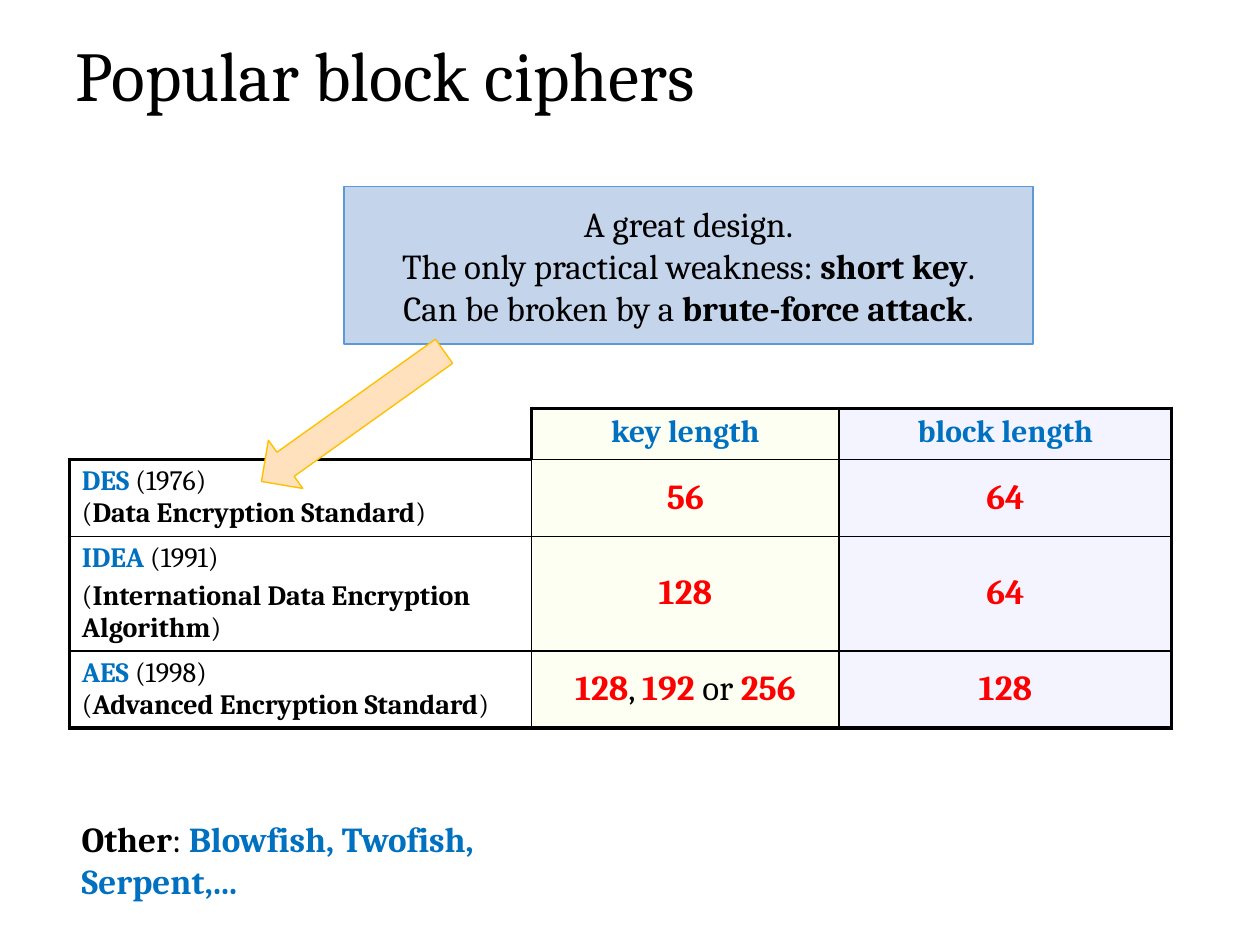
"""Build a slide comparing popular block ciphers."""
from lxml import etree
from pptx import Presentation
from pptx import util as u
from pptx.dml.color import RGBColor
from pptx.enum import shapes, text
from pptx.oxml.ns import qn

THEME = {
    "font": "Cambria",
    "size": {"title": 40, "body": 20, "header": 18, "cipher": 16},
    "color": {"ink": "000000", "blue": "0070C0", "red": "FF0000",
              "key": "FDFFF3", "block": "F3F4FF", "callout": "C4D5EB",
              "callout_line": "5B9BD5", "arrow": "FFE2BD", "arrow_line": "FFC000"},
    "line": {"shape": 0.79, "inner": 1, "outer": 2.25},
}
STYLES = {"plain": ("ink", False), "strong": ("ink", True),
          "name": ("blue", True), "value": ("red", True)}

TITLE = "Popular block ciphers"
CALLOUT = [
    [("A great design.", "plain")],
    [("The only practical weakness: ", "plain"), ("short key", "strong"), (".", "plain")],
    [("Can be broken by a ", "plain"), ("brute-force attack", "strong"), (".", "plain")],
]
OTHER = [[("Other", "strong"), (": ", "plain"), ("Blowfish, Twofish, Serpent,...", "name")]]
HEADERS = ["key length", "block length"]
CIPHERS = [
    ([[("DES ", "name"), ("(1976)\n(", "plain"),
       ("Data Encryption Standard", "strong"), (")", "plain")]],
     [("56", "value")], "64"),
    ([[("IDEA", "name"), (" (1991)", "plain")],
      [("(", "plain"), ("International Data Encryption Algorithm", "strong"), (")", "plain")]],
     [("128", "value")], "64"),
    ([[("AES", "name"), (" (1998)\n(", "plain"),
       ("Advanced Encryption Standard", "strong"), (")", "plain")]],
     [("128", "value"), (", ", "plain"), ("192 ", "value"), ("or ", "plain"), ("256", "value")],
     "128"),
]
COLUMN_WIDTHS = [3.67, 2.44, 2.64]
ROW_HEIGHTS = [0.31, 0.52, 0.62, 0.52]


def color(name):
    return RGBColor.from_string(THEME["color"][name])


def inches(*lengths):
    return [u.Inches(length) for length in lengths]


def write(frame, paragraphs, size, align=text.PP_ALIGN.LEFT, gap=0):
    points = THEME["size"][size]
    for index, spans in enumerate(paragraphs):
        para = frame.add_paragraph() if index else frame.paragraphs[0]
        para.alignment = align
        para.font.name, para.font.size = THEME["font"], u.Pt(points)
        if index and gap:
            para.space_before = u.Pt(gap * points)
        for words, style in spans:
            for number, line in enumerate(words.split("\n")):
                if number:
                    para.add_line_break()
                span = para.add_run()
                span.text = line
                tone, span.font.bold = STYLES[style]
                span.font.color.rgb = color(tone)


def add_box(page, kind, place, fill, line):
    box = page.shapes.add_shape(kind, *inches(*place))
    box.shadow.inherit = False
    box.fill.solid()
    box.fill.fore_color.rgb = color(fill)
    box.line.color.rgb = color(line)
    box.line.width = u.Pt(THEME["line"]["shape"])
    return box


def set_borders(cell, widths):
    properties = cell._tc.get_or_add_tcPr()
    for index, (side, width) in enumerate(widths.items()):
        line = etree.Element(qn(f"a:ln{side}"), w=str(u.Pt(width)))
        if width:
            fill = etree.SubElement(line, qn("a:solidFill"))
            etree.SubElement(fill, qn("a:srgbClr"), val=THEME["color"]["ink"])
        else:
            etree.SubElement(line, qn("a:noFill"))
        properties.insert(index, line)


def border_widths(row, column):
    inner, outer = THEME["line"]["inner"], THEME["line"]["outer"]
    if row == column == 0:
        return {"L": 0, "R": outer, "T": 0, "B": outer}
    corner_side = row == 0 and column == 1
    below_corner = row == 1 and column == 0
    return {"L": outer if column == 0 or corner_side else inner,
            "R": outer if column == 2 else inner,
            "T": outer if row == 0 or below_corner else inner,
            "B": outer if row == 3 else inner}


def add_cipher_table(page):
    table = page.shapes.add_table(4, 3, *inches(0.55, 3.24, 8.75, 2.62)).table
    table.first_row = table.horz_banding = False
    for column, width in zip(table.columns, COLUMN_WIDTHS):
        column.width = u.Inches(width)
    for row, height in zip(table.rows, ROW_HEIGHTS):
        row.height = u.Inches(height)
    rows = [[None] + [[[(header, "name")]] for header in HEADERS]]
    rows += [[name, [key], [[(block, "value")]]] for name, key, block in CIPHERS]
    for r, contents in enumerate(rows):
        for c, paragraphs in enumerate(contents):
            cell = table.cell(r, c)
            if c:
                cell.fill.solid()
                cell.fill.fore_color.rgb = color(("key", "block")[c - 1])
            else:
                cell.fill.background()
            set_borders(cell, border_widths(r, c))
            if paragraphs:
                size = "header" if r == 0 else "body" if c else "cipher"
                align = text.PP_ALIGN.CENTER if c else text.PP_ALIGN.LEFT
                write(cell.text_frame, paragraphs, size, align, gap=0.2)
            if r and c:
                cell.vertical_anchor = text.MSO_ANCHOR.MIDDLE


def main():
    deck = Presentation()
    deck.slide_width, deck.slide_height = inches(10, 7.5)
    page = deck.slides.add_slide(deck.slide_layouts.get_by_name("Title Only"))

    title = page.shapes.title
    title.left, title.top, title.width, title.height = inches(0.5, 0, 9, 1.25)
    title.text_frame.vertical_anchor = text.MSO_ANCHOR.MIDDLE
    write(title.text_frame, [[(TITLE, "plain")]], "title")
    title.text_frame.paragraphs[0].line_spacing = 0.9

    add_cipher_table(page)

    other = page.shapes.add_textbox(*inches(0.55, 6.44, 4.41, 0.44))
    other.text_frame.word_wrap = True
    other.text_frame.auto_size = text.MSO_AUTO_SIZE.SHAPE_TO_FIT_TEXT
    write(other.text_frame, OTHER, "body")

    kinds = shapes.MSO_SHAPE
    callout = add_box(page, kinds.RECTANGLE, (2.73, 1.48, 5.47, 1.25),
                      "callout", "callout_line")
    callout.text_frame.vertical_anchor = text.MSO_ANCHOR.MIDDLE
    write(callout.text_frame, CALLOUT, "body", text.PP_ALIGN.CENTER)
    arrow = add_box(page, kinds.LEFT_ARROW, (1.91, 3.07, 1.78, 0.47), "arrow", "arrow_line")
    arrow.rotation = 324.5

    deck.save("out.pptx")


if __name__ == "__main__":
    main()
